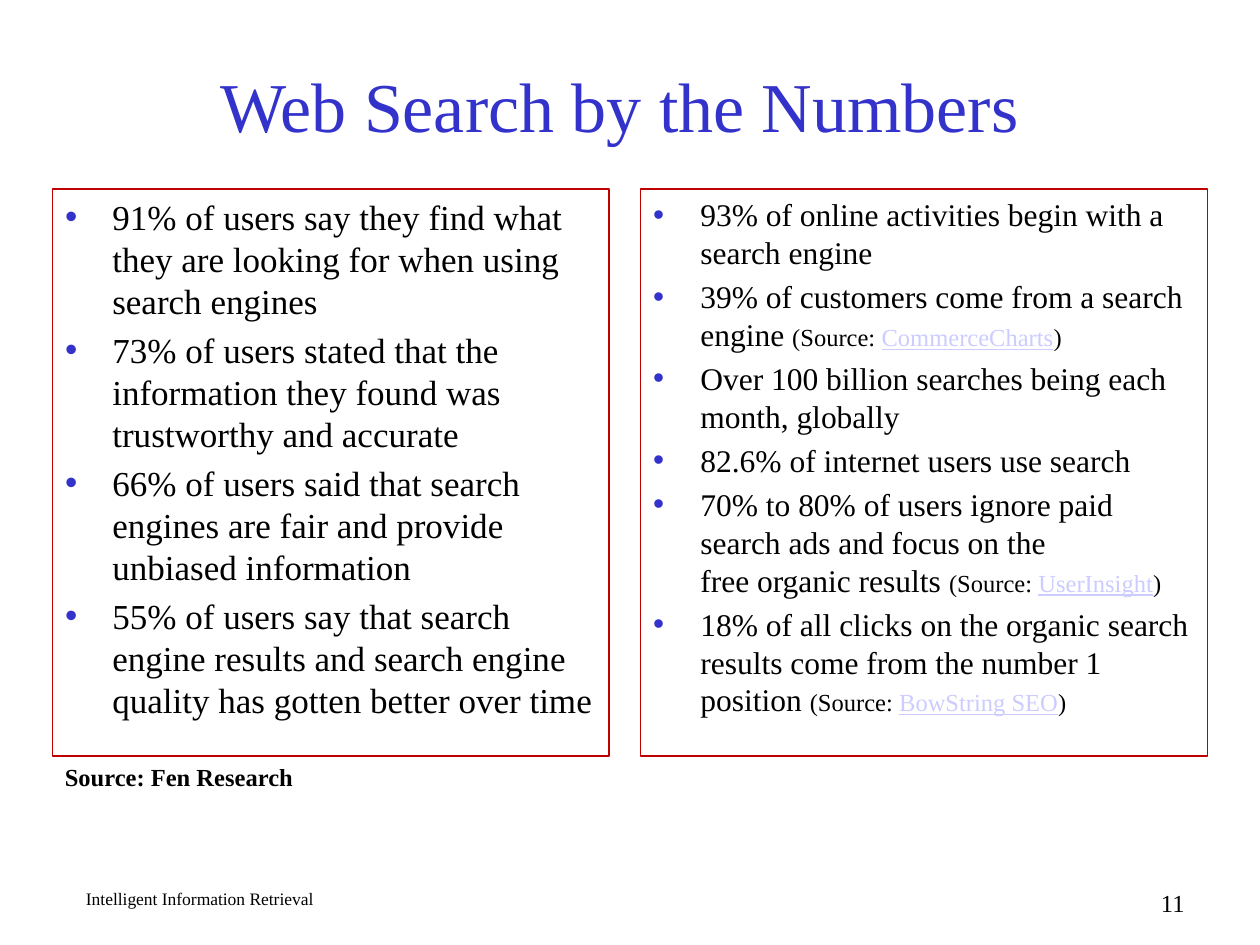
"""Build the "Web Search by the Numbers" slide with two bordered bullet lists."""
import pptx
import pptx.dml.color
import pptx.enum.text
import pptx.oxml
import pptx.oxml.ns
import pptx.util

Pt = pptx.util.Pt
RGBColor = pptx.dml.color.RGBColor
PP_ALIGN = pptx.enum.text.PP_ALIGN
MSO_ANCHOR = pptx.enum.text.MSO_ANCHOR
MSO_AUTO_SIZE = pptx.enum.text.MSO_AUTO_SIZE

BLUE = RGBColor(0x33, 0x33, 0xCC)
RED = RGBColor(0xC0, 0x00, 0x00)
BLACK = RGBColor(0x00, 0x00, 0x00)
LAVENDER = RGBColor(0xCC, 0xCC, 0xFF)
FONT = "Times New Roman"
BULLET_FONT = "Arial"
SOURCE_SIZE = 14
INDENT = 27
HARD_SPACE = chr(160)

TITLE = "Web Search by the Numbers"
TITLE_BOX = (48, 24, 612, 72)

USER_OPINIONS = [
    ("91% of users say they find what they are looking for when using search engines", None),
    ("73% of users stated that the information they found was trustworthy and accurate", None),
    ("66% of users said that search engines are fair and provide unbiased information", None),
    ("55% of users say that search engine results and search engine quality "
     "has gotten better over time", None),
]
SEARCH_FACTS = [
    (f"93% of online{HARD_SPACE}activities begin with a search engine", None),
    ("39% of customers come from a search engine ", "CommerceCharts"),
    ("Over 100 billion searches being each month, globally", None),
    ("82.6% of internet users use search", None),
    ("70% to 80% of users ignore paid search ads and focus on the "
     f"free{HARD_SPACE}organic{HARD_SPACE}results ", "UserInsight"),
    ("18% of all clicks on the organic search results come from the number 1 position ",
     "BowString SEO"),
]
LISTS = [
    (1, (30, 108, 318, 324), 20, USER_OPINIONS),
    (2, (366, 108, 324, 324), 18, SEARCH_FACTS),
]
LABELS = [
    ("Intelligent Information Retrieval", (42, 504, 270, 18), 10, False, PP_ALIGN.LEFT),
    ("11", (534, 504, 150, 18), 14, False, PP_ALIGN.RIGHT),
    ("Source: Fen Research", (30, 432, 318, 24.5), 14, True, PP_ALIGN.LEFT),
]


def place(shape, box):
    shape.left, shape.top, shape.width, shape.height = map(Pt, box)


def format_run(run, size, color=BLACK, bold=False, underline=False):
    font = run.font
    font.name, font.size, font.bold, font.underline = FONT, Pt(size), bold, underline
    font.color.rgb = color


def add_run(paragraph, text, size, color=BLACK, underline=False):
    run = paragraph.add_run()
    run.text = text
    format_run(run, size, color, underline=underline)


def add_bullet(paragraph):
    properties = paragraph._p.get_or_add_pPr()
    properties.set("marL", str(Pt(INDENT)))
    properties.set("indent", str(-Pt(INDENT)))
    namespace = pptx.oxml.ns.nsdecls("a")
    for xml in (
        f'<a:buClr {namespace}><a:srgbClr val="{BLUE}"/></a:buClr>',
        f'<a:buFont {namespace} typeface="{BULLET_FONT}"/>',
        f'<a:buChar {namespace} char="•"/>',
    ):
        properties.append(pptx.oxml.parse_xml(xml))


def fill_list(shape, box, size, items):
    place(shape, box)
    shape.line.color.rgb = RED
    shape.line.width = Pt(0.75)
    frame = shape.text_frame
    frame.auto_size = MSO_AUTO_SIZE.NONE
    frame.vertical_anchor = MSO_ANCHOR.TOP
    for index, (text, source) in enumerate(items):
        paragraph = frame.add_paragraph() if index else frame.paragraphs[0]
        paragraph.space_before = Pt(size * 0.2)
        add_bullet(paragraph)
        add_run(paragraph, text, size)
        if source:
            add_run(paragraph, "(Source: ", SOURCE_SIZE)
            add_run(paragraph, source, SOURCE_SIZE, LAVENDER, True)
            add_run(paragraph, ")", SOURCE_SIZE)


def add_label(slide, text, box, size, bold, alignment):
    frame = slide.shapes.add_textbox(*map(Pt, box)).text_frame
    frame.word_wrap = True
    frame.text = text
    paragraph = frame.paragraphs[0]
    paragraph.alignment = alignment
    format_run(paragraph.runs[0], size, bold=bold)


def main():
    presentation = pptx.Presentation()
    presentation.slide_width, presentation.slide_height = Pt(720), Pt(540)
    slide = presentation.slides.add_slide(presentation.slide_layouts[3])

    title = slide.shapes.title
    place(title, TITLE_BOX)
    title.text_frame.text = TITLE
    title.text_frame.auto_size = MSO_AUTO_SIZE.NONE
    title.text_frame.vertical_anchor = MSO_ANCHOR.MIDDLE
    title.text_frame.paragraphs[0].alignment = PP_ALIGN.CENTER
    format_run(title.text_frame.paragraphs[0].runs[0], 40, BLUE)

    for placeholder, box, size, items in LISTS:
        fill_list(slide.placeholders[placeholder], box, size, items)
    for label in LABELS:
        add_label(slide, *label)
    presentation.save("out.pptx")


if __name__ == "__main__":
    main()
